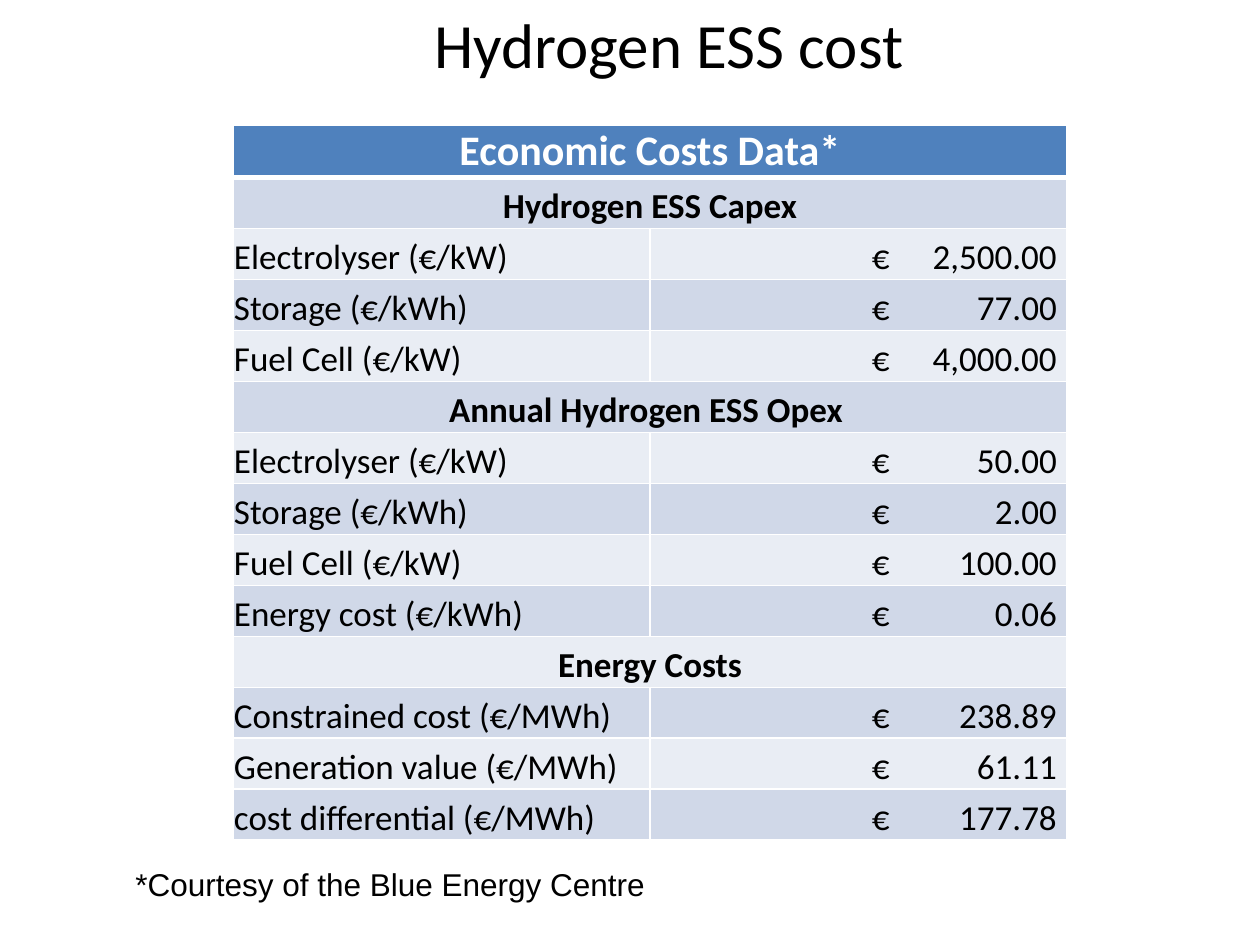
from typing import NamedTuple

from lxml.etree import SubElement
from pptx import Presentation
from pptx.dml.color import RGBColor
from pptx.enum.text import MSO_ANCHOR as Anchor, MSO_AUTO_SIZE as AutoSize, PP_ALIGN as Align
from pptx.oxml.ns import qn
from pptx.util import Pt

EMU_PER_PX = 914400 / 126
BLACK, WHITE = "000000", "FFFFFF"
HEADER_FILL, ODD_FILL, EVEN_FILL = "4F81BD", "D0D8E8", "E9EDF4"
ROW_HEIGHT, COLUMN_WIDTH = 51, 417
EURO_STOP, AMOUNT_STOP = 221, 406


class Row(NamedTuple):
    label: str
    amount: str = ""  # rows without an amount are headings across both columns


ROWS = [
    Row("Economic Costs Data*"),
    Row("Hydrogen ESS Capex"),
    Row("Electrolyser (€/kW)", "2,500.00"),
    Row("Storage (€/kWh)", "77.00"),
    Row("Fuel Cell (€/kW)", "4,000.00"),
    Row("Annual Hydrogen ESS Opex "),
    Row("Electrolyser (€/kW)", "50.00"),
    Row("Storage (€/kWh)", "2.00"),
    Row("Fuel Cell (€/kW)", "100.00"),
    Row("Energy cost (€/kWh)", "0.06"),
    Row("Energy Costs"),
    Row("Constrained cost (€/MWh)", "238.89"),
    Row("Generation value (€/MWh)", "61.11"),
    Row("cost differential (€/MWh)", "177.78"),
]


def px(length: int) -> int:
    return round(length * EMU_PER_PX)


def color(value: str) -> RGBColor:
    return RGBColor.from_string(value)


def add_span(para, text: str, size: int, font: str = "Calibri",
             ink: str = BLACK, bold: bool = False) -> None:
    span = para.add_run()
    span.text = text
    span.font.name = font
    span.font.size = Pt(size)
    span.font.bold = bold
    span.font.color.rgb = color(ink)


def add_tab_stops(para) -> None:
    """Line up the euro signs on the left and the amounts on the right."""
    stops = SubElement(para._p.get_or_add_pPr(), qn("a:tabLst"))
    for position, side in ((EURO_STOP, "l"), (AMOUNT_STOP, "r")):
        SubElement(stops, qn("a:tab"), pos=str(px(position)), algn=side)


def set_borders(cell, top: int, bottom: int) -> None:
    """Draw white borders; widths are in points."""
    properties = cell._tc.get_or_add_tcPr()
    sides = (("a:lnL", 1), ("a:lnR", 1), ("a:lnT", top), ("a:lnB", bottom))
    for index, (tag, width) in enumerate(sides):
        line = SubElement(properties, qn(tag), w=str(Pt(width)))
        fill = SubElement(line, qn("a:solidFill"))
        SubElement(fill, qn("a:srgbClr"), val=WHITE)
        properties.insert(index, line)  # borders come before the fill


def format_cell(cell, row_index: int) -> None:
    band = ODD_FILL if row_index % 2 else EVEN_FILL
    cell.fill.solid()
    cell.fill.fore_color.rgb = color(band if row_index else HEADER_FILL)
    cell.margin_left = cell.margin_right = cell.margin_top = px(1)
    cell.margin_bottom = 0
    cell.vertical_anchor = Anchor.BOTTOM
    set_borders(cell, top=3 if row_index == 1 else 1, bottom=1 if row_index else 3)


def add_cost_table(slide, left: int, top: int) -> None:
    frame = slide.shapes.add_table(len(ROWS), 2, px(left), px(top),
                                   px(2 * COLUMN_WIDTH), px(len(ROWS) * ROW_HEIGHT))
    table = frame.table
    for column in table.columns:
        column.width = px(COLUMN_WIDTH)
    for index, row in enumerate(ROWS):
        table.rows[index].height = px(ROW_HEIGHT)
        label_cell, amount_cell = table.cell(index, 0), table.cell(index, 1)
        for cell in (label_cell, amount_cell):
            format_cell(cell, index)
        label = label_cell.text_frame.paragraphs[0]
        if row.amount:
            add_span(label, row.label, 20)
            amount = amount_cell.text_frame.paragraphs[0]
            add_tab_stops(amount)
            add_span(amount, f"\t€\t{row.amount}", 20)
        else:
            label_cell.merge(amount_cell)
            label.alignment = Align.CENTER
            add_span(label, row.label, 20 if index else 24,
                     ink=BLACK if index else WHITE, bold=True)


def add_title(slide, text: str) -> None:
    title = slide.shapes.title
    title.left, title.top, title.width, title.height = px(354), 0, px(630), px(86)
    title.text_frame.vertical_anchor = Anchor.MIDDLE
    para = title.text_frame.paragraphs[0]
    para.alignment = Align.CENTER
    add_span(para, text, 36)


def add_footnote(slide, text: str) -> None:
    box = slide.shapes.add_textbox(px(123), px(859), px(1101), px(50))
    box.text_frame.word_wrap = True
    box.text_frame.auto_size = AutoSize.SHAPE_TO_FIT_TEXT
    add_span(box.text_frame.paragraphs[0], text, 18, font="Arial")


def main() -> None:
    deck = Presentation()
    deck.slide_width, deck.slide_height = px(1260), px(945)
    slide = deck.slides.add_slide(deck.slide_layouts.get_by_name("Title Only"))
    add_title(slide, "Hydrogen ESS cost")
    add_cost_table(slide, 233, 125)
    add_footnote(slide, "*Courtesy of the Blue Energy Centre")
    deck.save("out.pptx")


if __name__ == "__main__":
    main()
